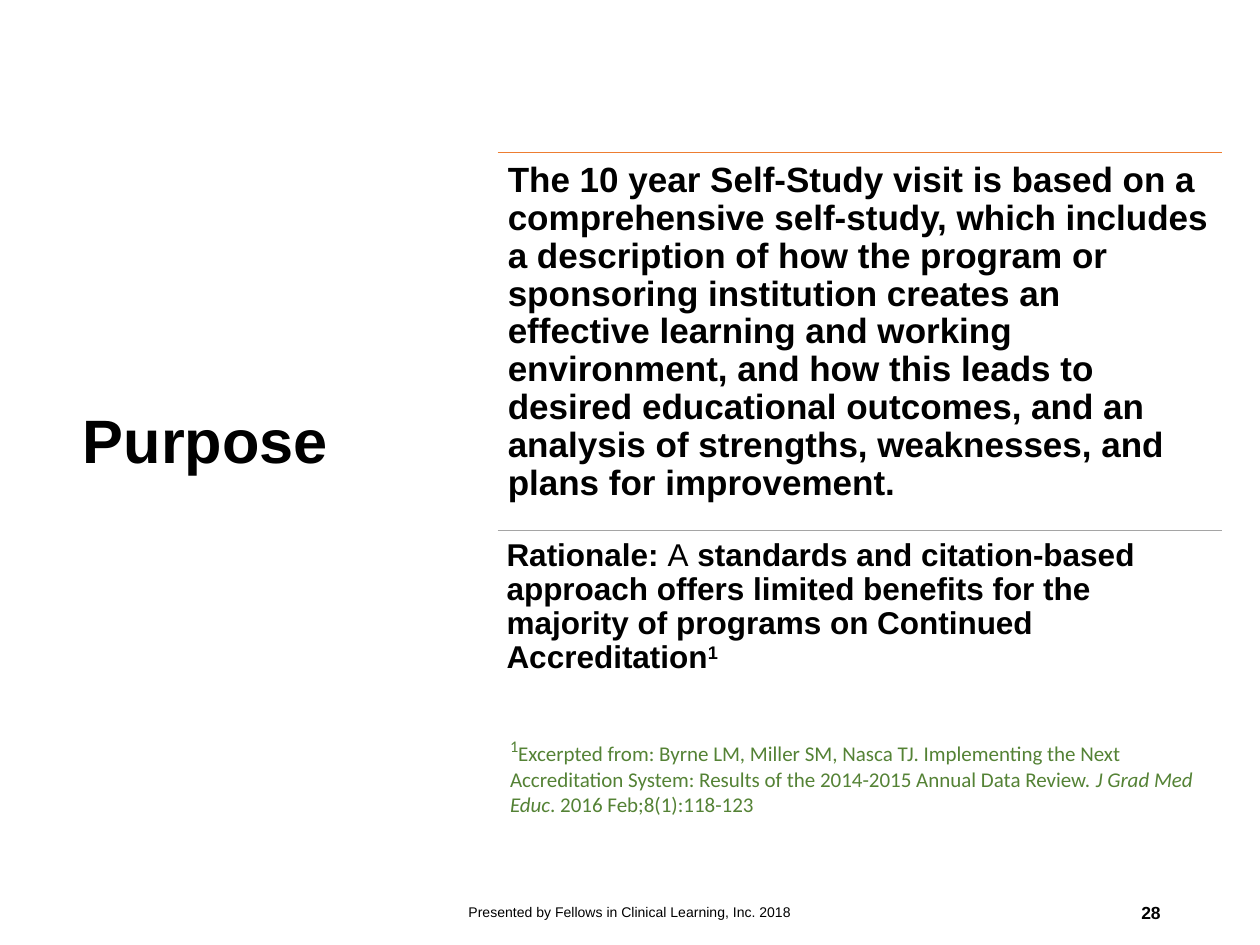
from pptx import Presentation
from pptx.dml.color import RGBColor
from pptx.enum.shapes import MSO_CONNECTOR
from pptx.enum.text import MSO_ANCHOR, PP_ALIGN
from pptx.oxml.ns import qn
from pptx.util import Inches, Pt
from lxml.etree import SubElement

BLACK, GREEN, ORANGE, GRAY = "000000", "548235", "ED7D31", "A5A5A5"
WIDTH, HEIGHT = 10, 7.5
COLUMN, COLUMN_WIDTH = 3.95, 5.75
FOOTER_TOP, FOOTER_HEIGHT = 7.04, 0.4

PURPOSE = (
    "The 10 year Self-Study visit is based on a comprehensive self-study, "
    "which includes a description of how the program or sponsoring institution "
    "creates an effective learning and working environment, and how this leads "
    "to desired educational outcomes, and an analysis of strengths, weaknesses, "
    "and plans for improvement."
)
RATIONALE = [
    ("Rationale: ", {}),
    ("A", {"bold": False}),
    (" standards and citation-based approach offers limited benefits for the "
     "majority of programs on Continued Accreditation", {}),
    ("1", {"raised": True}),
]
CITATION = [
    ("1", {"size": 16, "raised": True}),
    ("Excerpted from: Byrne LM, Miller SM, Nasca TJ. Implementing the Next "
     "Accreditation System: Results of the 2014-2015 Annual Data Review. ", {}),
    ("J Grad Med Educ", {"italic": True}),
    (". 2016 Feb;8(1):118-123", {}),
]
FOOTER = "Presented by Fellows in Clinical Learning, Inc. 2018"
SECTIONS = [
    (1.21, 3, ORANGE, PURPOSE, {"size": 20, "inset": 0.08}),
    (4.21, 1.72, GRAY, RATIONALE, {"size": 18, "inset": 0.07}),
]


def color(value):
    return RGBColor.from_string(value)


def add_span(para, text, size, font="Arial", fill=BLACK, bold=False,
             italic=False, raised=False):
    span = para.add_run()
    span.text = text
    span.font.name = font
    span.font.size = Pt(size)
    span.font.bold = bold
    span.font.italic = italic
    span.font.color.rgb = color(fill)
    if raised:
        span._r.get_or_add_rPr().set("baseline", "30000")


def add_text(page, area, text, inset=None, anchor=MSO_ANCHOR.TOP,
             align=PP_ALIGN.LEFT, spacing=1.0, **style):
    box = page.shapes.add_textbox(*map(Inches, area))
    frame = box.text_frame
    frame.word_wrap = True
    frame.vertical_anchor = anchor
    if inset is not None:
        frame.margin_left = frame.margin_right = Inches(inset)
        frame.margin_top = frame.margin_bottom = Inches(inset)
    para = frame.paragraphs[0]
    para.alignment = align
    para.line_spacing = spacing
    spans = [(text, {})] if isinstance(text, str) else text
    for words, changes in spans:
        add_span(para, words, **{**style, **changes})


def add_rule(page, top, fill):
    rule = page.shapes.add_connector(
        MSO_CONNECTOR.STRAIGHT, Inches(COLUMN), Inches(top),
        Inches(COLUMN + COLUMN_WIDTH), Inches(top))
    rule.line.color.rgb = color(fill)
    rule.line.width = Pt(0.5)
    SubElement(rule._element.spPr, qn("a:effectLst"))


def main():
    deck = Presentation()
    deck.slide_width, deck.slide_height = Inches(WIDTH), Inches(HEIGHT)
    page = deck.slides.add_slide(deck.slide_layouts[6])

    add_text(page, (0.56, 1.47, 2.53, 4.1), "Purpose", size=35, bold=True,
             anchor=MSO_ANCHOR.MIDDLE, spacing=0.9)
    for top, height, fill, text, style in SECTIONS:
        add_rule(page, top, fill)
        add_text(page, (COLUMN, top, COLUMN_WIDTH, height), text,
                 bold=True, spacing=0.9, **style)
    add_text(page, (COLUMN, 5.77, 5.9, 0.71), CITATION, size=12,
             font="Calibri", fill=GREEN)
    add_text(page, (3.31, FOOTER_TOP, 3.38, FOOTER_HEIGHT), FOOTER, size=8,
             anchor=MSO_ANCHOR.MIDDLE, align=PP_ALIGN.CENTER)
    add_text(page, (7.06, FOOTER_TOP, 2.25, FOOTER_HEIGHT), "28", size=10,
             bold=True, anchor=MSO_ANCHOR.MIDDLE, align=PP_ALIGN.RIGHT)
    deck.save("out.pptx")


if __name__ == "__main__":
    main()
